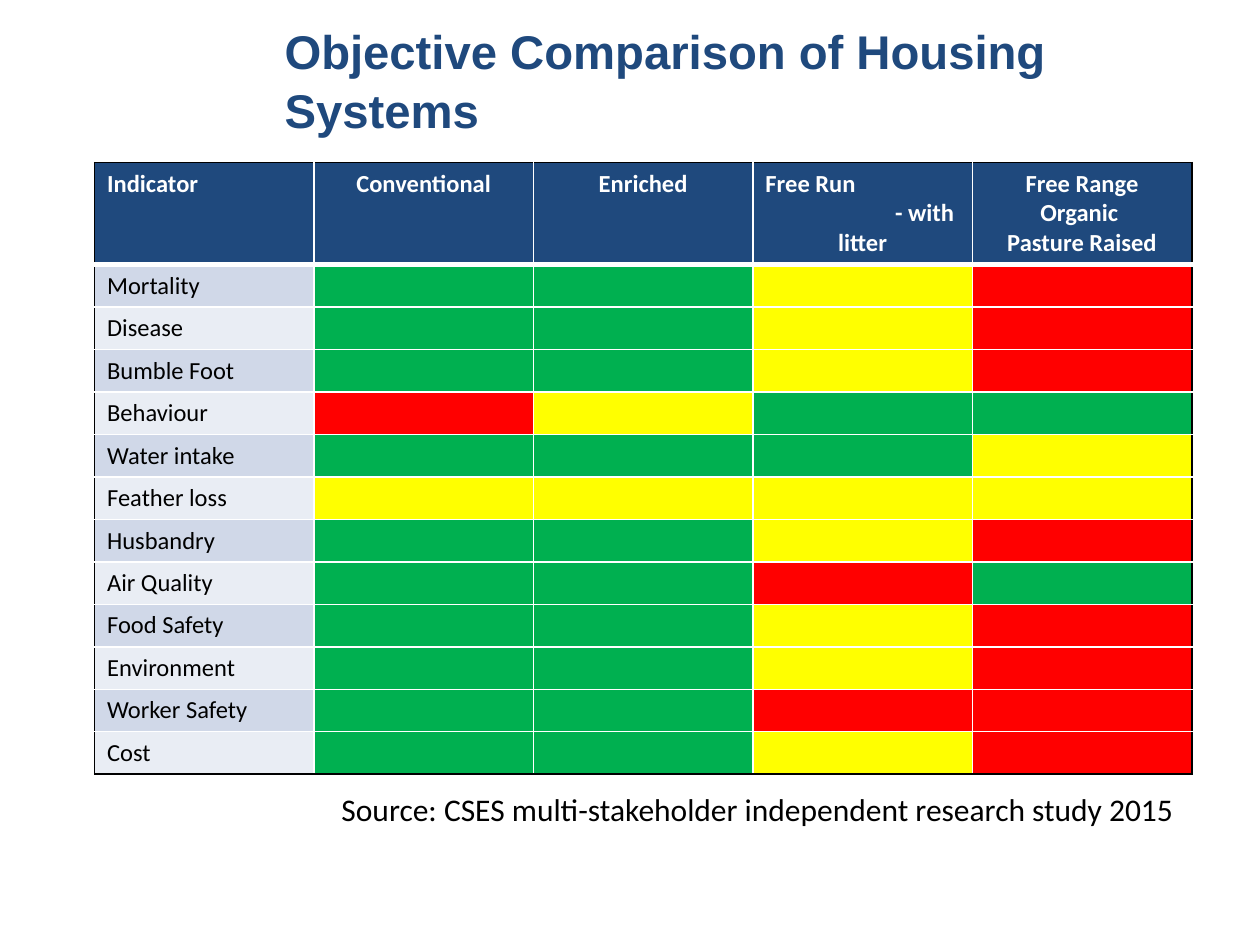
from dataclasses import dataclass

from lxml.etree import SubElement
from pptx import Presentation
from pptx.dml.color import RGBColor
from pptx.enum.text import MSO_ANCHOR, PP_ALIGN
from pptx.oxml.ns import qn
from pptx.util import Inches, Pt


@dataclass(frozen=True)
class Theme:
    navy: str = "1F497D"
    white: str = "FFFFFF"
    black: str = "000000"
    bands: tuple = ("D0D8E8", "E9EDF4")
    title_font: str = "Arial"
    body_font: str = "Calibri"
    title_size: int = 27
    source_size: int = 18
    table_size: int = 14


THEME = Theme()
LEFT, CENTER, RIGHT = PP_ALIGN.LEFT, PP_ALIGN.CENTER, PP_ALIGN.RIGHT
RATING_COLORS = {"G": "00B050", "Y": "FFFF00", "R": "FF0000"}

TITLE = "Objective Comparison of Housing Systems"
SOURCE = "Source: CSES multi-stakeholder independent research study 2015 "

# Each header is a list of (line, alignment)
HEADERS = [
    [("Indicator", LEFT)],
    [("Conventional", CENTER)],
    [("Enriched", CENTER)],
    [("Free Run", LEFT), ("- with ", RIGHT), ("litter", CENTER)],
    [("Free Range Organic ", CENTER), ("Pasture Raised", CENTER)],
]
# One rating letter per housing system
RATINGS = [
    ("Mortality", "GGYR"),
    ("Disease", "GGYR"),
    ("Bumble Foot", "GGYR"),
    ("Behaviour", "RYGG"),
    ("Water intake", "GGGY"),
    ("Feather loss", "YYYY"),
    ("Husbandry", "GGYR"),
    ("Air Quality", "GGRG"),
    ("Food Safety", "GGYR"),
    ("Environment", "GGYR"),
    ("Worker Safety", "GGRR"),
    ("Cost", "GGYR"),
]

SLIDE_WIDTH, SLIDE_HEIGHT = 10, 7.5
TABLE_LEFT, TABLE_TOP, TABLE_WIDTH, TABLE_HEIGHT = 0.75, 1.29, 8.71, 4.8
HEADER_HEIGHT = 0.8


def write_text(text_frame, lines, *, size, font=THEME.body_font,
               color=THEME.black, bold=False, spacing=None):
    """Write (text, alignment) pairs as paragraphs sharing one format."""
    for index, (text, alignment) in enumerate(lines):
        paragraph = text_frame.paragraphs[0] if index == 0 else text_frame.add_paragraph()
        paragraph.alignment = alignment
        if spacing:
            paragraph.line_spacing = spacing
        if text:
            paragraph.add_run().text = text
        for target in (paragraph, *paragraph.runs):
            target.font.size = Pt(size)
            target.font.name = font
            target.font.bold = bold
            target.font.color.rgb = RGBColor.from_string(color)
        if not text:  # an empty cell takes its height from the end mark
            SubElement(paragraph._p, qn("a:endParaRPr"), sz=str(size * 100))


def add_text_box(slide, box, lines, anchor=MSO_ANCHOR.TOP, **text_format):
    shape = slide.shapes.add_textbox(*map(Inches, box))
    shape.text_frame.word_wrap = True
    shape.text_frame.vertical_anchor = anchor
    write_text(shape.text_frame, lines, **text_format)


def set_borders(cell, borders):
    """Borders are (color, points) pairs in the order left, right, top, bottom."""
    properties = cell._tc.get_or_add_tcPr()
    for index, (side, (color, points)) in enumerate(zip("LRTB", borders)):
        line = SubElement(properties, qn(f"a:ln{side}"), w=str(Pt(points)))
        SubElement(SubElement(line, qn("a:solidFill")), qn("a:srgbClr"), val=color)
        properties.insert(index, line)


def add_ratings_table(slide):
    row_count, column_count = len(RATINGS) + 1, len(HEADERS)
    table = slide.shapes.add_table(
        row_count, column_count,
        *map(Inches, (TABLE_LEFT, TABLE_TOP, TABLE_WIDTH, TABLE_HEIGHT))).table
    for column in table.columns:
        column.width = Inches(TABLE_WIDTH / column_count)
    for index, row in enumerate(table.rows):
        row.height = Inches((TABLE_HEIGHT - HEADER_HEIGHT) / len(RATINGS)
                            if index else HEADER_HEIGHT)

    contents = [[(lines, THEME.navy) for lines in HEADERS]]
    for index, (indicator, ratings) in enumerate(RATINGS):
        contents.append([([(indicator, LEFT)], THEME.bands[index % 2])]
                        + [([("", CENTER)], RATING_COLORS[rating]) for rating in ratings])

    outer, inner, header_rule = (THEME.black, 1), (THEME.white, 1), (THEME.white, 3)
    last_row, last_column = row_count - 1, column_count - 1
    for row, cells in enumerate(contents):
        top = {0: outer, 1: header_rule}.get(row, inner)
        bottom = {0: header_rule, last_row: outer}.get(row, inner)
        for column, (lines, fill) in enumerate(cells):
            cell = table.cell(row, column)
            cell.fill.solid()
            cell.fill.fore_color.rgb = RGBColor.from_string(fill)
            write_text(cell.text_frame, lines, size=THEME.table_size, bold=row == 0,
                       color=THEME.black if row else THEME.white)
            set_borders(cell, (inner if column else outer,
                               outer if column == last_column else inner, top, bottom))


def main():
    presentation = Presentation()
    presentation.slide_width = Inches(SLIDE_WIDTH)
    presentation.slide_height = Inches(SLIDE_HEIGHT)
    slide = presentation.slides.add_slide(presentation.slide_layouts[6])
    add_ratings_table(slide)
    add_text_box(slide, (2.16, 0, 7.78, 1.25), [(TITLE, LEFT)], MSO_ANCHOR.MIDDLE,
                 size=THEME.title_size, font=THEME.title_font, color=THEME.navy,
                 bold=True, spacing=1.05)
    add_text_box(slide, (0.89, 6.22, 8.58, 0.4), [(SOURCE, RIGHT)], size=THEME.source_size)
    presentation.save("out.pptx")


if __name__ == "__main__":
    main()
